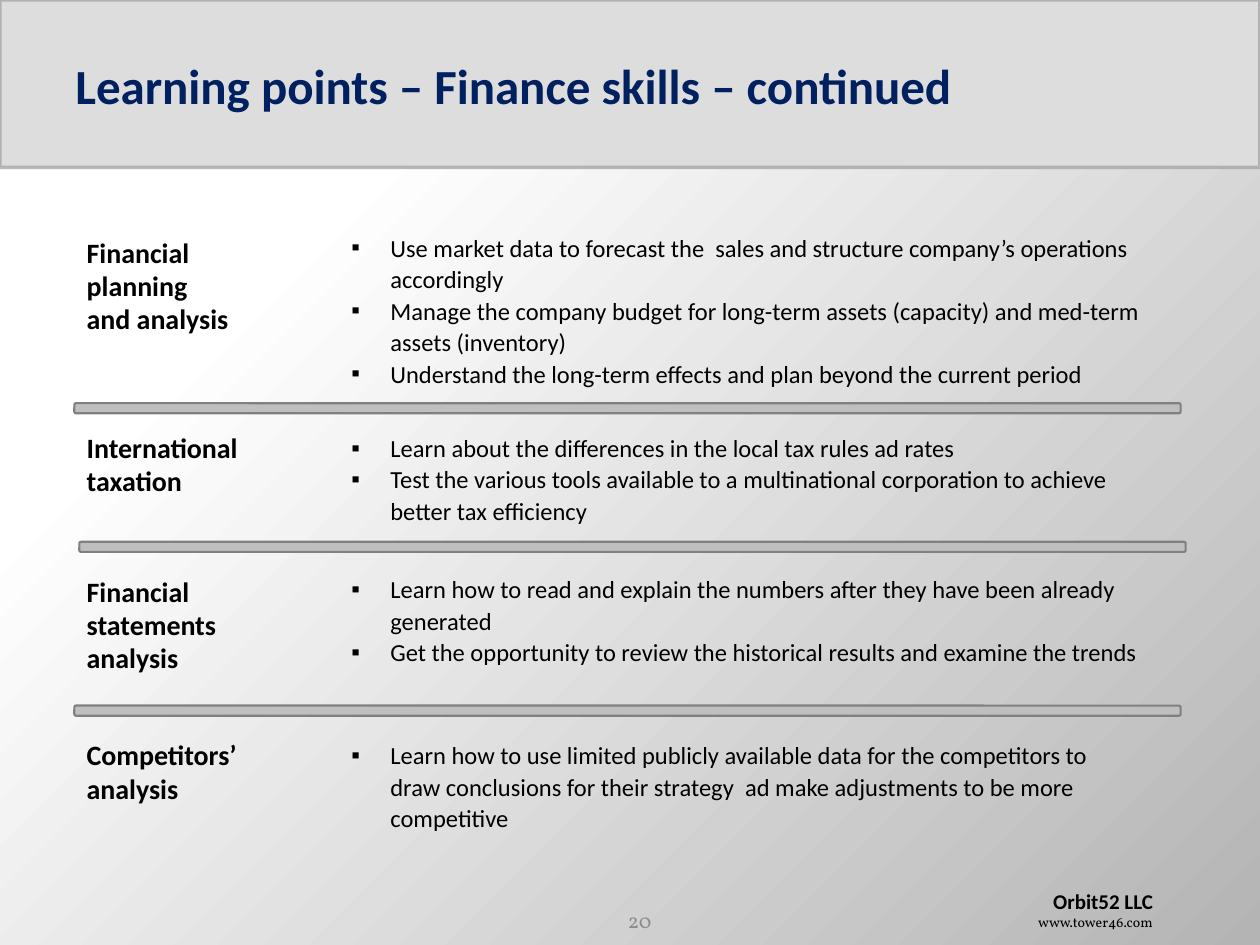
from lxml import etree
from pptx import Presentation
from pptx import util as u
from pptx.dml import color as clr
from pptx.enum import shapes, text
from pptx.oxml import ns

INK = {"black": "000000", "navy": "002060", "page": "8C8C8C", "band": "DDDDDD",
       "edge": "A6A6A6", "bar": "BFBFBF", "rim": "808080",
       "light": "FFFFFF", "dark": "B4B4B4"}
FONTS = {
    "title": {"name": "Calibri", "size": u.Pt(28), "bold": True},
    "topic": {"name": "Calibri", "size": u.Pt(16), "bold": True},
    "point": {"name": "Calibri", "size": u.Pt(14), "bold": False},
    "firm": {"name": "Calibri", "size": u.Pt(12), "bold": True},
    "site": {"name": "Vollkorn", "size": u.Pt(8), "bold": False},
    "page": {"name": "Vollkorn", "size": u.Pt(12), "bold": False},
}
TINTS = {"title": "navy", "page": "page"}
RIGHT = {"alignment": text.PP_ALIGN.RIGHT}
MIDDLE = {"vertical_anchor": text.MSO_ANCHOR.MIDDLE,
          "auto_size": text.MSO_AUTO_SIZE.NONE}
TOPIC_X, POINT_X = 0.59, 2.69

# Topic lines, topic box (top, height), points, points box (top, width, height)
ROWS = [
    (["Financial", "planning", "and analysis"], (1.82, 0.9),
     ["Use market data to forecast the  sales and structure company’s operations accordingly",
      "Manage the company budget for long-term assets (capacity) and med-term assets (inventory)",
      "Understand the long-term effects and plan beyond the current period"],
     (1.78, 6.64, 1.67)),
    (["International", "taxation"], (3.37, 0.64),
     ["Learn about the differences in the local tax rules ad rates",
      "Test the various tools available to a multinational corporation to achieve better tax efficiency"],
     (3.37, 6.64, 1.16)),
    (["Financial", "statements", "analysis"], (4.51, 0.9),
     ["Learn how to read and explain the numbers after they have been already generated",
      "Get the opportunity to review the historical results and examine the trends"],
     (4.49, 6.47, 1.16)),
    (["Competitors’", "analysis"], (5.81, 0.63),
     ["Learn how to use limited publicly available data for the competitors to draw conclusions "
      "for their strategy  ad make adjustments to be more competitive"],
     (5.81, 6.47, 1.16)),
]
BARS = [(0.59, 3.2), (0.63, 4.3), (0.59, 5.6)]


def rgb(key):
    return clr.RGBColor.from_string(INK[key])


def put(obj, vals):
    for key, val in vals.items():
        setattr(obj, key, val)


def add_sub(node, tag, **attrs):
    return etree.SubElement(node, ns.qn(tag), attrs)


def add_bullet(para):
    props = para._p.get_or_add_pPr()
    put(props, {})
    inset = u.Inches(0.31)
    props.set("marL", str(inset))
    props.set("indent", str(-inset))
    add_sub(props, "a:buFont", typeface="Arial")
    add_sub(props, "a:buChar", char="▪")


def add_text(slide, at, lines, frame=None, para=None, bullet=False):
    """Lines are (style, words) pairs, one paragraph each."""
    box = slide.shapes.add_textbox(*map(u.Inches, at)).text_frame
    put(box, {"word_wrap": True, "auto_size": text.MSO_AUTO_SIZE.SHAPE_TO_FIT_TEXT,
              **(frame or {})})
    for i, (style, words) in enumerate(lines):
        item = box.add_paragraph() if i else box.paragraphs[0]
        if bullet:
            add_bullet(item)
        put(item, para or {})
        run = item.add_run()
        run.text = words
        put(run.font, FONTS[style])
        run.font.color.rgb = rgb(TINTS.get(style, "black"))


def add_block(slide, kind, at, fill, line, width):
    block = slide.shapes.add_shape(kind, *map(u.Inches, at))
    block.shadow.inherit = False
    block.fill.solid()
    block.fill.fore_color.rgb = rgb(fill)
    block.line.color.rgb = rgb(line)
    block.line.width = u.Pt(width)
    return block


def set_back(slide):
    """Radial gradient spreading from the top left corner."""
    fill = slide.background.fill
    fill.gradient()
    for stop, key, place in zip(fill.gradient_stops, ("light", "dark"), (0.24, 1)):
        stop.color.rgb = rgb(key)
        stop.position = place
    grad = slide._element.find(".//" + ns.qn("a:gradFill"))
    grad.remove(grad.find(ns.qn("a:lin")))
    ring = add_sub(grad, "a:path", path="circle")
    add_sub(ring, "a:fillToRect", r="100000", b="100000")


def add_row(slide, topic, spot, points, area):
    top, high = spot
    add_text(slide, (TOPIC_X, top, 2.6, high), [("topic", t) for t in topic],
             para={"line_spacing": u.Pt(19)})
    top, wide, high = area
    add_text(slide, (POINT_X, top, wide, high), [("point", p) for p in points],
             para={"line_spacing": u.Pt(18)}, bullet=True)


def main():
    deck = Presentation()
    put(deck, {"slide_width": u.Inches(10), "slide_height": u.Inches(7.5)})
    slide = deck.slides.add_slide(deck.slide_layouts[6])
    set_back(slide)

    # Header band and title
    band = add_block(slide, shapes.MSO_SHAPE.RECTANGLE, (0, 0, 10, 1.33),
                     "band", "edge", 2)
    tint = band.line._ln.find(".//" + ns.qn("a:srgbClr"))
    add_sub(tint, "a:alpha", val="78000")
    add_text(slide, (0.5, 0.05, 9, 1.25),
             [("title", "Learning points – Finance skills – continued")], MIDDLE)

    # Footer
    add_text(slide, (8, 7, 1.25, 0.44),
             [("firm", "Orbit52 LLC"), ("site", "www.tower46.com")], para=RIGHT)
    add_text(slide, (4.73, 7.1, 0.54, 0.4), [("page", "20")], MIDDLE, RIGHT)

    # Topics with their points, then the bars between them
    for row in ROWS:
        add_row(slide, *row)
    for left, top in BARS:
        add_block(slide, shapes.MSO_SHAPE.ROUNDED_RECTANGLE, (left, top, 8.78, 0.08),
                  "bar", "rim", 1.25)
    deck.save("out.pptx")


if __name__ == "__main__":
    main()
